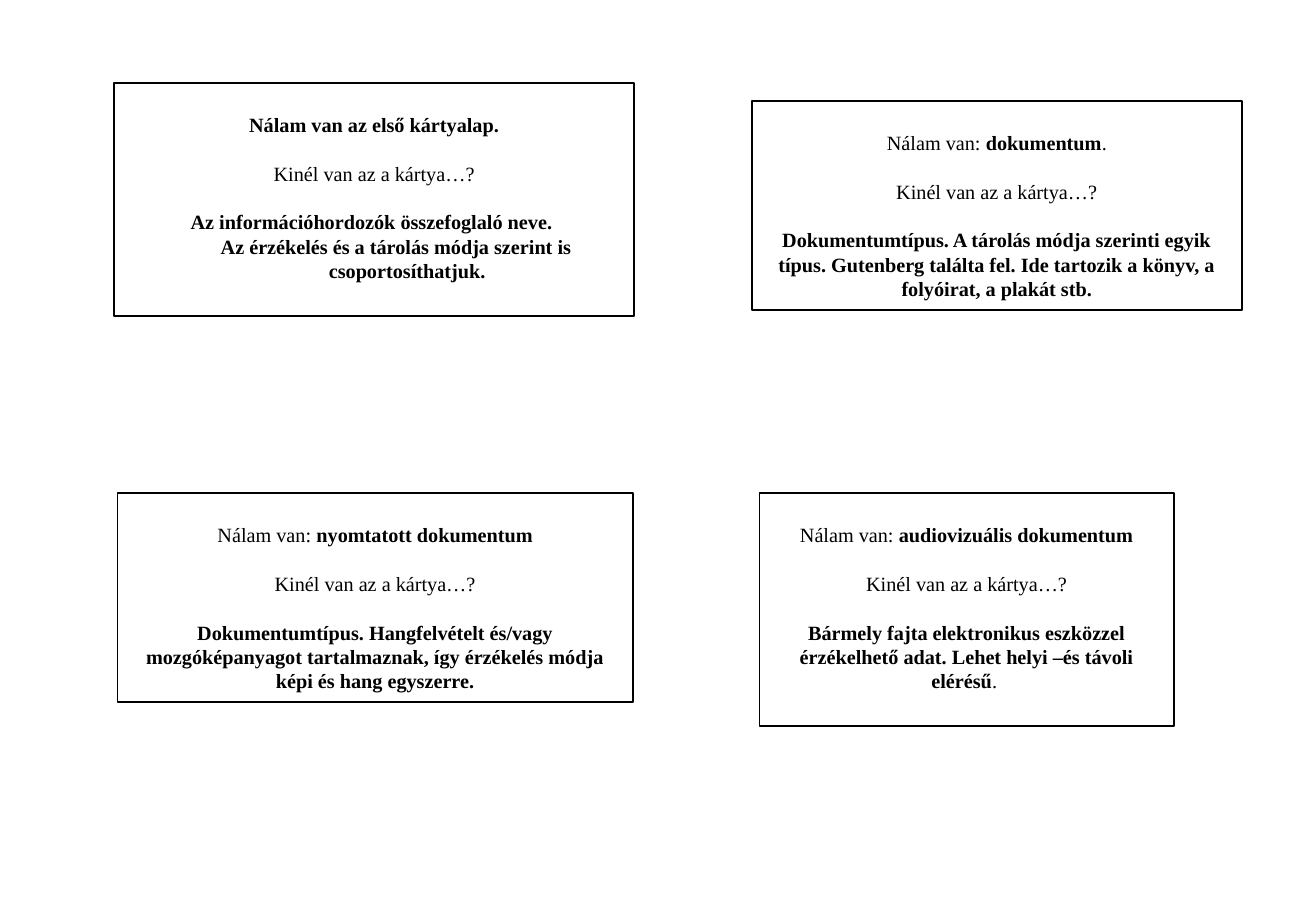
from pptx import Presentation
from pptx.dml.color import RGBColor
from pptx.enum.shapes import MSO_SHAPE
from pptx.enum.text import MSO_ANCHOR, PP_ALIGN
from pptx.util import Cm, Pt

RECTANGLE = MSO_SHAPE.RECTANGLE
TOP = MSO_ANCHOR.TOP
CENTER = PP_ALIGN.CENTER
BLANK_LAYOUT = 6


def color(hex_code):
    return RGBColor.from_string(hex_code)


def write(paragraph, text, font="Times New Roman", size=12, bold=False, ink="000000"):
    run = paragraph.add_run()
    run.text = text
    run.font.name = font
    run.font.size = Pt(size)
    run.font.bold = bold
    run.font.color.rgb = color(ink)


class CardSheet:
    line_pitch = Pt(14.4)
    ink = "000000"

    def __init__(self, slide):
        self.slide = slide

    def paragraph(self, frame, runs, first=False, gap=True, indent=0):
        """Add one centred paragraph; runs are (text, bold) pairs."""
        paragraph = frame.paragraphs[0] if first else frame.add_paragraph()
        paragraph.alignment = CENTER
        paragraph.line_spacing = self.line_pitch
        paragraph.space_before = self.line_pitch if gap and not first else Pt(0)
        if indent:
            properties = paragraph._p.get_or_add_pPr()
            properties.set("marL", str(Cm(indent)))
            properties.set("indent", "0")
        for text, bold in runs:
            write(paragraph, text, bold=bold, ink=self.ink)

    def card(self, left, top, width, height, holder, clue):
        """Draw a card; clue holds (runs, indent) for each paragraph."""
        card = self.slide.shapes.add_shape(
            RECTANGLE, Cm(left), Cm(top), Cm(width), Cm(height))
        card.shadow.inherit = False
        card.fill.background()
        card.line.color.rgb = color(self.ink)
        card.line.width = Pt(1)
        frame = card.text_frame
        frame.word_wrap = True
        frame.vertical_anchor = TOP
        frame.margin_left = frame.margin_right = Cm(0.25)
        frame.margin_top, frame.margin_bottom = Cm(0.62), Cm(0.13)

        self.paragraph(frame, holder, first=True)
        self.paragraph(frame, [("Kinél van az a kártya…?", False)])
        for number, (runs, indent) in enumerate(clue):
            self.paragraph(frame, runs, gap=number == 0, indent=indent)


def holding(term, ending=""):
    runs = [("Nálam van: ", False), (term, True)]
    return runs + [(ending, False)] if ending else runs


def main():
    deck = Presentation()
    deck.slide_width, deck.slide_height = Cm(27.51), Cm(19.05)
    sheet = CardSheet(deck.slides.add_slide(deck.slide_layouts[BLANK_LAYOUT]))

    # Top row
    sheet.card(2.39, 1.73, 10.87, 4.88,
               [("Nálam van az első kártyalap.", True)],
               [([("Az információhordozók összefoglaló neve. ", True)], 0),
                ([("Az érzékelés és a tárolás módja szerint is", True)], 0.92),
                ([("csoportosíthatjuk.", True)], 1.38)])
    sheet.card(15.72, 2.11, 10.24, 4.37,
               holding("dokumentum", "."),
               [([("Dokumentumtípus. A tárolás módja szerinti egyik típus. "
                   "Gutenberg találta fel. Ide tartozik a könyv, a folyóirat, "
                   "a plakát stb.", True)], 0)])

    # Bottom row
    sheet.card(2.46, 10.31, 10.77, 4.37,
               holding("nyomtatott dokumentum"),
               [([("Dokumentumtípus. Hangfelvételt és/vagy mozgóképanyagot "
                   "tartalmaznak, így érzékelés módja képi és hang egyszerre.",
                   True)], 0)])
    sheet.card(15.88, 10.31, 8.66, 4.88,
               holding("audiovizuális dokumentum"),
               [([("Bármely fajta elektronikus eszközzel érzékelhető adat. "
                   "Lehet helyi –és távoli elérésű", True), (". ", False)], 0)])

    deck.save("out.pptx")


if __name__ == "__main__":
    main()
